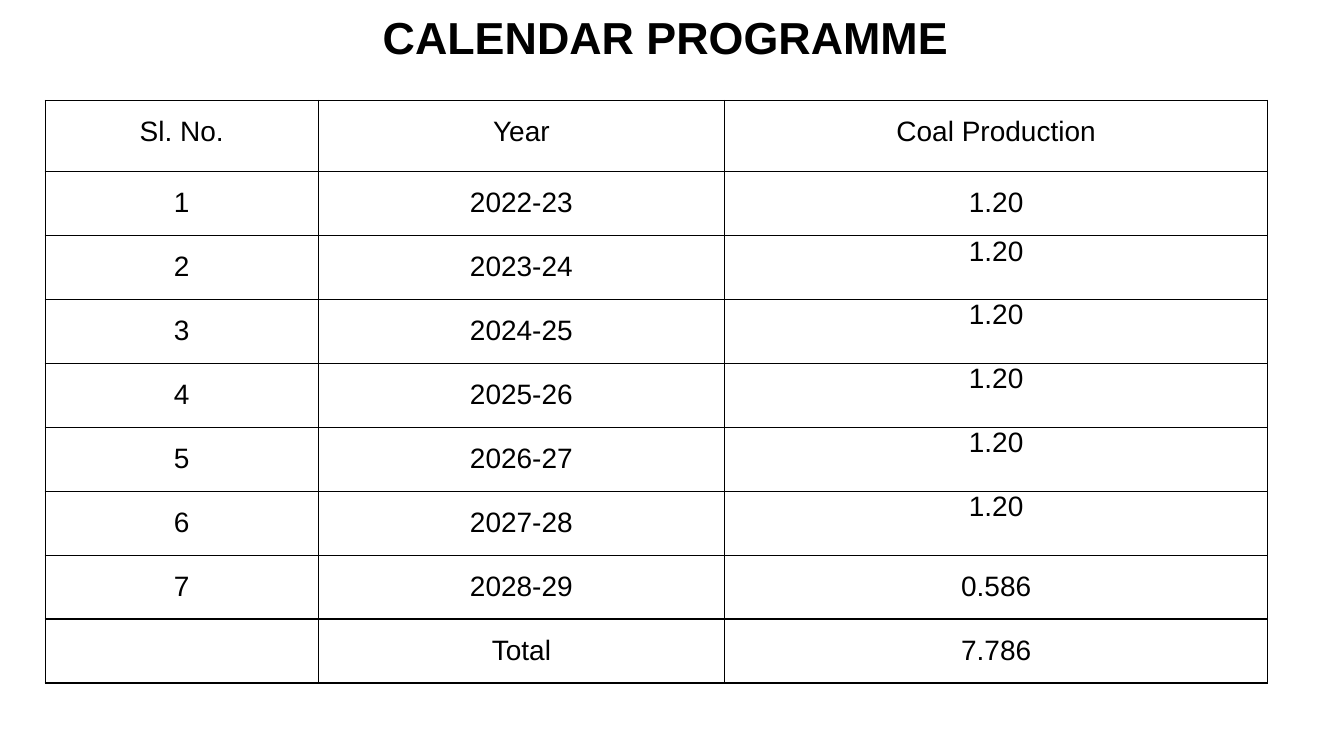
from dataclasses import dataclass

from lxml import etree
from pptx import Presentation
from pptx.dml.color import RGBColor
from pptx.enum.text import MSO_ANCHOR, PP_ALIGN
from pptx.oxml.ns import qn
from pptx.table import _Cell
from pptx.text.text import _Paragraph
from pptx.util import Cm, Pt

CENTER = PP_ALIGN.CENTER
MIDDLE = MSO_ANCHOR.MIDDLE
COLORS = {"text": "000000", "border": "000000"}
FONT = "Arial"
COLUMN_WIDTHS = (6.88, 10.24, 13.69)
HEADER_HEIGHT, ROW_HEIGHT = 1.8, 1.61
BORDER_SIDES = ("a:lnL", "a:lnR", "a:lnT", "a:lnB")


@dataclass
class ProgrammeRow:
    number: str
    year: str
    production: str
    production_spacing: float = 1.5


ROWS = [
    ProgrammeRow("Sl. No.", "Year", "Coal Production"),
    ProgrammeRow("1", "2022-23", "1.20"),
    *(ProgrammeRow(str(number), f"{2021 + number}-{22 + number}", "1.20", 1.0)
      for number in range(2, 7)),
    ProgrammeRow("7", "2028-29", "0.586"),
    ProgrammeRow("", "Total", "7.786"),
]


def style_paragraph(paragraph: _Paragraph, size: int, bold: bool = False) -> None:
    paragraph.alignment = CENTER
    paragraph.font.name = FONT
    paragraph.font.size = Pt(size)
    paragraph.font.bold = bold
    paragraph.font.color.rgb = RGBColor.from_string(COLORS["text"])


def add_borders(cell: _Cell) -> None:
    properties = cell._tc.get_or_add_tcPr()
    for position, side in enumerate(BORDER_SIDES):
        line = etree.Element(qn(side), w=str(Pt(1)))
        fill = etree.SubElement(line, qn("a:solidFill"))
        etree.SubElement(fill, qn("a:srgbClr"), val=COLORS["border"])
        properties.insert(position, line)


def fill_cell(cell: _Cell, text: str, spacing: float) -> None:
    cell.margin_left = cell.margin_right = Cm(0.18)
    cell.margin_top = cell.margin_bottom = 0
    cell.fill.background()
    add_borders(cell)
    cell.text = text
    paragraph = cell.text_frame.paragraphs[0]
    paragraph.line_spacing = spacing
    style_paragraph(paragraph, 20)


def main() -> None:
    presentation = Presentation()
    presentation.slide_width = Cm(33.87)
    presentation.slide_height = Cm(19.05)
    slide = presentation.slides.add_slide(presentation.slide_layouts[6])

    # Title
    title = slide.shapes.add_textbox(Cm(0.56), Cm(0.13), Cm(32.74), Cm(1.6))
    title.text_frame.word_wrap = True
    title.text_frame.vertical_anchor = MIDDLE
    title.text_frame.text = "CALENDAR PROGRAMME "
    style_paragraph(title.text_frame.paragraphs[0], 32, bold=True)

    # Production table
    table_height = HEADER_HEIGHT + ROW_HEIGHT * (len(ROWS) - 1)
    table = slide.shapes.add_table(
        len(ROWS), len(COLUMN_WIDTHS), Cm(1.14), Cm(2.53),
        Cm(sum(COLUMN_WIDTHS)), Cm(table_height)).table
    table.horz_banding = False
    table.first_row = False
    for column, width in zip(table.columns, COLUMN_WIDTHS):
        column.width = Cm(width)
    for index, row in enumerate(ROWS):
        table.rows[index].height = Cm(ROW_HEIGHT if index else HEADER_HEIGHT)
        fill_cell(table.cell(index, 0), row.number, 1.5)
        fill_cell(table.cell(index, 1), row.year, 1.5)
        fill_cell(table.cell(index, 2), row.production, row.production_spacing)

    presentation.save("out.pptx")


if __name__ == "__main__":
    main()
